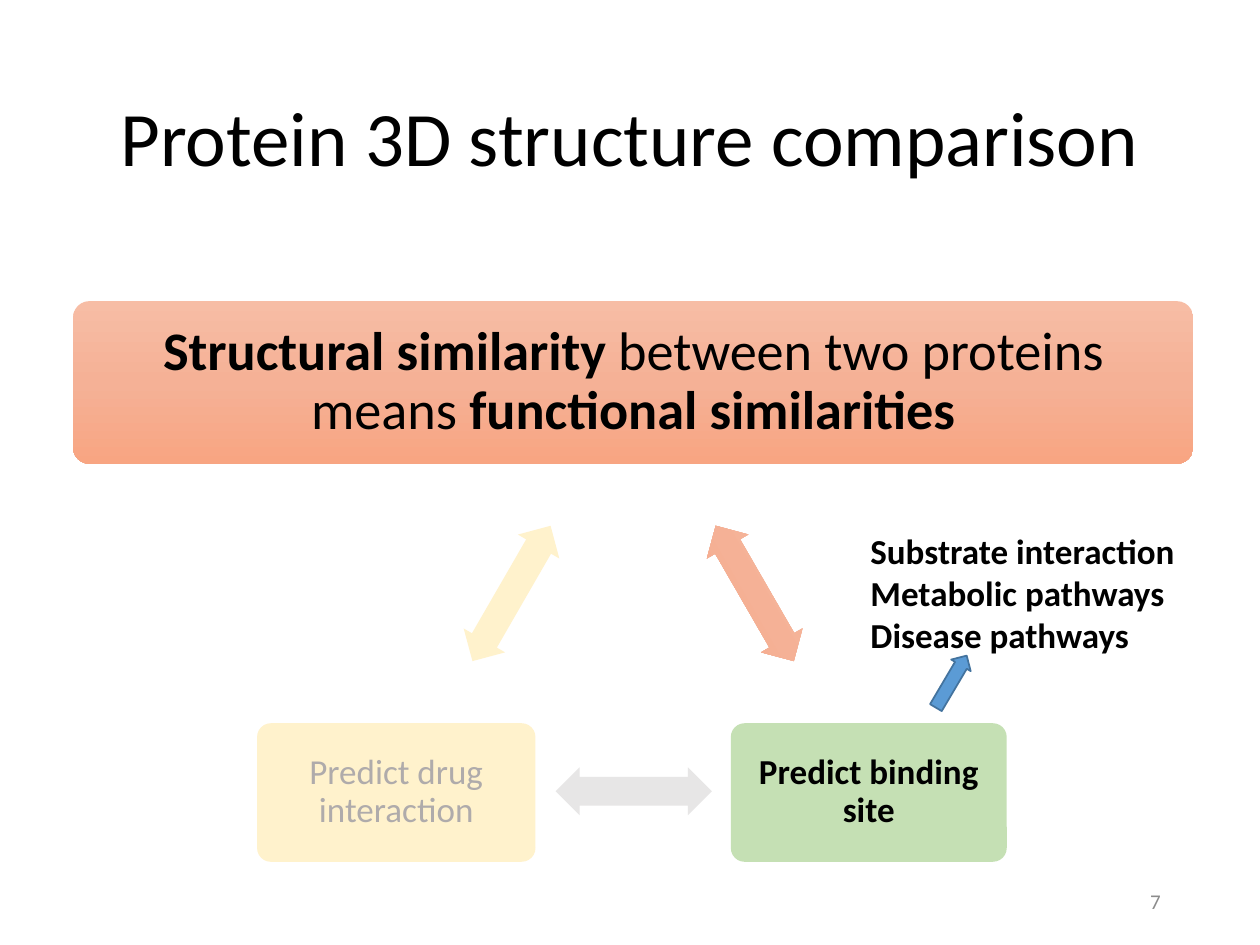
from copy import deepcopy
from dataclasses import dataclass

from pptx import Presentation
from pptx.dml.color import RGBColor
from pptx.enum.shapes import MSO_SHAPE
from pptx.enum.text import MSO_ANCHOR, PP_ALIGN
from pptx.oxml.ns import qn
from pptx.util import Inches, Pt

COLORS = {
    "black": "000000",
    "muted": "AFABAB",
    "number": "8C8C8C",
    "green": "C5E0B4",
    "cream": "FFF2CC",
    "gray": "E7E6E6",
    "blue": "5B9BD5",
    "edge": "43739E",
    "light": "F7BDA5",
    "mid": "F5B196",
    "deep": "F8A582",
}
SALMON = ("light", "mid", "deep")


@dataclass
class Box:
    left: float
    top: float
    width: float
    height: float

    def place(self) -> tuple:
        return tuple(Inches(v) for v in (self.left, self.top, self.width, self.height))


@dataclass
class Card:
    box: Box
    fill: tuple
    runs: tuple
    size: float
    color: str = "black"
    inset: float = 0.08


@dataclass
class Arrow:
    box: Box
    turn: float
    fill: tuple
    kind: MSO_SHAPE = MSO_SHAPE.LEFT_RIGHT_ARROW


@dataclass
class Label:
    box: Box
    lines: tuple
    size: float
    color: str = "black"
    bold: bool = False
    align: PP_ALIGN = PP_ALIGN.LEFT
    anchor: MSO_ANCHOR = MSO_ANCHOR.MIDDLE
    space: float = 1.0


def rgb(name: str) -> RGBColor:
    return RGBColor.from_string(COLORS[name])


def style(font, size: float, color: str) -> None:
    font.name = "Calibri"
    font.size = Pt(size)
    font.color.rgb = rgb(color)


def paint(shape, names: tuple) -> None:
    if len(names) == 1:
        shape.fill.solid()
        shape.fill.fore_color.rgb = rgb(names[0])
        return
    shape.fill.gradient()
    shape.fill.gradient_angle = 270
    stops = next(shape._element.spPr.iter(qn("a:gsLst")))
    while len(stops) < len(names):
        stops.append(deepcopy(stops[0]))
    for i, (stop, name) in enumerate(zip(shape.fill.gradient_stops, names)):
        stop.position = i / (len(names) - 1)
        stop.color.rgb = rgb(name)


def add_form(slide, kind: MSO_SHAPE, box: Box, fill: tuple):
    shape = slide.shapes.add_shape(kind, *box.place())
    shape.shadow.inherit = False
    shape.line.fill.background()
    paint(shape, fill)
    return shape


def draw_card(slide, card: Card) -> None:
    shape = add_form(slide, MSO_SHAPE.ROUNDED_RECTANGLE, card.box, card.fill)
    shape.adjustments[0] = 0.1
    frame = shape.text_frame
    frame.word_wrap = True
    frame.vertical_anchor = MSO_ANCHOR.MIDDLE
    frame.margin_left = frame.margin_right = Inches(card.inset)
    frame.margin_top = frame.margin_bottom = Inches(card.inset)
    para = frame.paragraphs[0]
    para.alignment = PP_ALIGN.CENTER
    para.line_spacing = 0.9
    style(para.font, card.size, card.color)
    for text, bold in card.runs:
        run = para.add_run()
        run.text = text
        run.font.bold = bold


def draw_arrow(slide, arrow: Arrow):
    shape = add_form(slide, arrow.kind, arrow.box, arrow.fill)
    shape.adjustments[0] = 0.6
    shape.adjustments[1] = 0.5
    shape.rotation = arrow.turn
    return shape


def draw_label(slide, label: Label) -> None:
    frame = slide.shapes.add_textbox(*label.box.place()).text_frame
    frame.word_wrap = True
    frame.vertical_anchor = label.anchor
    for i, line in enumerate(label.lines):
        para = frame.add_paragraph() if i else frame.paragraphs[0]
        para.text = line
        para.alignment = label.align
        para.line_spacing = label.space
        para.font.bold = label.bold
        style(para.font, label.size, label.color)


CARDS = (
    Card(Box(0.58, 2.39, 8.89, 1.29), SALMON,
         (("Structural similarity", True), (" between two proteins means ", False),
          ("functional similarities", True)), 31, inset=0.13),
    Card(Box(5.8, 5.74, 2.19, 1.1), ("green",), (("Predict binding site", True),), 20),
    Card(Box(2.04, 5.74, 2.21, 1.1), ("cream",),
         (("Predict drug interaction", False),), 20, "muted"),
)
ARROWS = (
    Arrow(Box(5.37, 4.52, 1.24, 0.38), 60, SALMON),
    Arrow(Box(4.41, 6.09, 1.24, 0.38), 180, ("gray",)),
    Arrow(Box(3.44, 4.52, 1.24, 0.38), 300, ("cream",)),
)
LABELS = (
    Label(Box(0.69, 0.4, 8.62, 1.45), ("Protein 3D structure comparison",), 44,
          align=PP_ALIGN.CENTER, space=0.9),
    Label(Box(7.06, 6.95, 2.25, 0.4), ("7",), 12, "number", align=PP_ALIGN.RIGHT),
    Label(Box(6.81, 4.15, 2.78, 1.11),
          ("Substrate interaction", "Metabolic pathways", "Disease pathways"), 20,
          bold=True, anchor=MSO_ANCHOR.TOP),
)
POINTER = Arrow(Box(7.46, 5.17, 0.18, 0.48), 30.6, ("blue",), MSO_SHAPE.UP_ARROW)


def main() -> None:
    deck = Presentation()
    deck.slide_width, deck.slide_height = Inches(10), Inches(7.5)
    slide = deck.slides.add_slide(deck.slide_layouts[6])
    for card in CARDS:
        draw_card(slide, card)
    for arrow in ARROWS:
        draw_arrow(slide, arrow)
    for label in LABELS:
        draw_label(slide, label)
    shape = draw_arrow(slide, POINTER)
    shape.line.color.rgb = rgb("edge")
    shape.line.width = Pt(1)
    deck.save("out.pptx")


if __name__ == "__main__":
    main()
